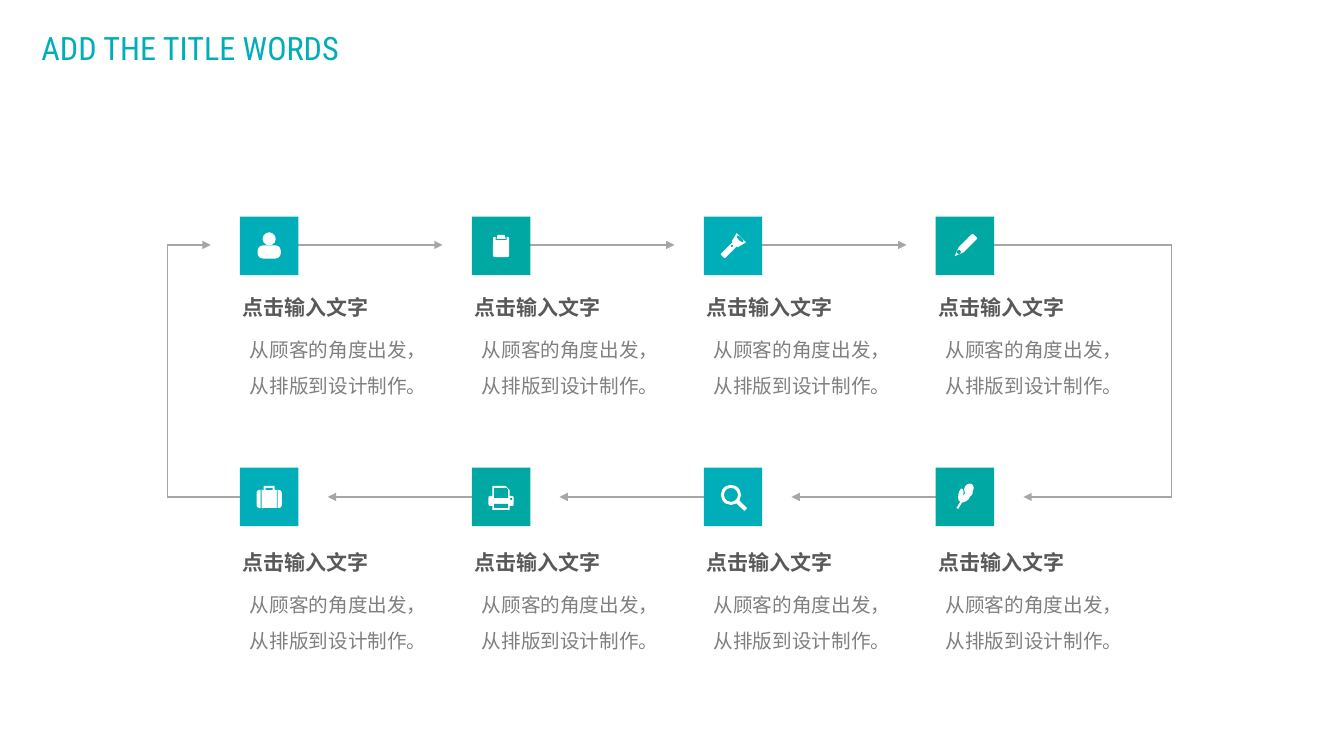
"""Build a slide with eight icon steps joined in a loop of arrows."""
from typing import NamedTuple

from lxml import etree
from pptx import Presentation
from pptx import util as u
from pptx.dml.color import RGBColor
from pptx.enum import shapes, text
from pptx.oxml import ns

PX = 9144
BLUE = RGBColor(0x00, 0xAE, 0xB9)
GREEN = RGBColor(0x00, 0xA8, 0xA4)
WHITE = RGBColor(0xFF, 0xFF, 0xFF)
LINE_GREY = RGBColor(0xA6, 0xA6, 0xA6)
HEADING_GREY = RGBColor(0x59, 0x59, 0x59)
BODY_GREY = RGBColor(0x80, 0x80, 0x80)
CJK = "Noto Sans CJK SC"
HEADING = "点击输入文字"
BODY = "从顾客的角度出发，从排版到设计制作。"

TILE = 58
GAP = TILE // 2
COLUMN_PITCH = 230
COLUMNS = [238 + COLUMN_PITCH * i for i in range(4)]
LOOP_LEFT, LOOP_RIGHT = 166, 1162
TOP_AXIS, BOTTOM_AXIS = 243, 493

SHAPE = shapes.MSO_SHAPE
RISING, FALLING, FLIPPED = 315, 45, 225


class Part(NamedTuple):
    """A piece of an icon, placed by its centre from the tile's centre."""
    kind: SHAPE
    dx: int
    dy: int
    width: int
    height: int
    turn: int = 0
    adjust: float = None
    cut: bool = False


def cut(kind, dx, dy, width, height, turn=0):
    """Return a part in the tile's colour, which reads as a hole."""
    return Part(kind, dx, dy, width, height, turn, cut=True)


def person():
    """Head over rounded shoulders."""
    return [Part(SHAPE.OVAL, 0, -7, 13, 13),
            Part(SHAPE.ROUNDED_RECTANGLE, 0, 6, 23, 13, adjust=0.4)]


def clipboard():
    """Board with a clip on its top edge."""
    return [Part(SHAPE.ROUNDED_RECTANGLE, 0, 1, 16, 20, adjust=0.1),
            cut(SHAPE.RECTANGLE, 0, -8, 11, 4),
            Part(SHAPE.TRAPEZOID, 0, -9, 9, 4)]


def flashlight():
    """Handle and flared head, with lens and button."""
    return [Part(SHAPE.ROUNDED_RECTANGLE, -4, 4, 18, 6, RISING),
            Part(SHAPE.TRAPEZOID, 5, -5, 13, 9, FLIPPED),
            cut(SHAPE.OVAL, 7, -7, 9, 3, FALLING),
            cut(SHAPE.OVAL, -1, 0, 2, 2)]


def pencil():
    """Shaft with a pointed tip."""
    return [Part(SHAPE.ROUNDED_RECTANGLE, 3, -3, 20, 7, RISING),
            Part(SHAPE.ISOSCELES_TRIANGLE, -7, 7, 7, 9, FLIPPED),
            cut(SHAPE.OVAL, -6, 6, 4, 4)]


def briefcase():
    """Case with a handle and two seams."""
    seams = [cut(SHAPE.RECTANGLE, side * 8, 2, 1, 18) for side in (-1, 1)]
    return [Part(SHAPE.ROUNDED_RECTANGLE, 0, 2, 25, 18),
            Part(SHAPE.ROUNDED_RECTANGLE, 0, -8, 11, 6),
            cut(SHAPE.RECTANGLE, 0, -8, 7, 2), *seams]


def printer():
    """Body with a sheet above, a tray below and a button."""
    return [Part(SHAPE.ROUNDED_RECTANGLE, 0, 4, 25, 10),
            Part(SHAPE.SNIP_1_RECTANGLE, 0, -4, 17, 14, adjust=0.3),
            Part(SHAPE.RECTANGLE, 0, 9, 17, 8),
            cut(SHAPE.SNIP_1_RECTANGLE, 0, -4, 14, 10),
            cut(SHAPE.RECTANGLE, 0, 9, 14, 4),
            cut(SHAPE.OVAL, 10, 2, 2, 2)]


def magnifier():
    """Ring with a slanted handle."""
    return [Part(SHAPE.DONUT, -2, -2, 20, 20, adjust=0.15),
            Part(SHAPE.ROUNDED_RECTANGLE, 8, 8, 13, 4, FALLING)]


def feather():
    """Quill with a rounded top, a left vane and two right barbs."""
    barbs = [Part(SHAPE.OVAL, 3 - 3 * i, -2 + 4 * i, 11, 5, 330)
             for i in range(2)]
    return [Part(SHAPE.RECTANGLE, -2, 2, 2, 22, 30),
            Part(SHAPE.OVAL, 4, -8, 9, 11, 30),
            Part(SHAPE.OVAL, -4, -2, 5, 13, 10), *barbs]


class Row(NamedTuple):
    """The tops of a row's elements and its icons."""
    tile_top: int
    heading_top: int
    body_top: int
    icons: list


ROWS = [
    Row(215, 287, 319, [person, clipboard, flashlight, pencil]),
    Row(464, 540, 572, [briefcase, printer, magnifier, feather]),
]


def px(*lengths):
    """Turn px lengths into EMU."""
    return [round(n * PX) for n in lengths]


def add_filled(group, kind, left, top, width, height, color):
    """Add a shape with a plain fill to a group."""
    sp = group.shapes.add_shape(kind, *px(left, top, width, height))
    sp.shadow.inherit = False
    sp.fill.solid()
    sp.fill.fore_color.rgb = color
    sp.line.fill.background()
    return sp


def add_icon_tile(s, left, top, color, icon):
    """Group a coloured square with the parts of its icon."""
    group = s.shapes.add_group_shape()
    add_filled(group, SHAPE.RECTANGLE, left, top, TILE, TILE, color)
    for part in icon():
        sp = add_filled(group, part.kind,
                        left + TILE / 2 + part.dx - part.width / 2,
                        top + TILE / 2 + part.dy - part.height / 2,
                        part.width, part.height, color if part.cut else WHITE)
        sp.rotation = part.turn
        if part.adjust is not None:
            sp.adjustments[0] = part.adjust


def add_line(s, x1, y1, x2, y2, arrow=False):
    """Draw a grey line, with an arrowhead at its end if asked."""
    line = s.shapes.add_connector(shapes.MSO_CONNECTOR.STRAIGHT,
                                  *px(x1, y1, x2, y2))
    line.line.color.rgb = LINE_GREY
    line.line.width = u.Pt(1)
    if arrow:
        ln = line.line._get_or_add_ln()
        etree.SubElement(ln, ns.qn("a:tailEnd"), type="triangle")
    etree.SubElement(line._element.spPr, ns.qn("a:effectLst"))


def write(sp, words, size, font, color, spacing, margins, bold=False):
    """Fill a text shape with one formatted paragraph."""
    tf = sp.text_frame
    tf.text = words
    tf.word_wrap = True
    tf.auto_size = text.MSO_AUTO_SIZE.SHAPE_TO_FIT_TEXT
    tf.vertical_anchor = text.MSO_ANCHOR.TOP
    tf.margin_left = tf.margin_right = margins[0] * PX
    tf.margin_top = tf.margin_bottom = margins[1] * PX
    p = tf.paragraphs[0]
    p.alignment = text.PP_ALIGN.LEFT
    p.line_spacing = spacing
    r = p.runs[0]
    r.font.size = u.Pt(size)
    r.font.name = font
    r.font.bold = bold
    r.font.color.rgb = color
    etree.SubElement(r.font._element, ns.qn("a:ea"), typeface=CJK)


def add_title(s):
    """Place and format the slide title."""
    sp = s.shapes.title
    sp.left, sp.top, sp.width, sp.height = px(32, 4, 336, 68)
    write(sp, "ADD THE TITLE WORDS", 23, "Roboto Condensed", BLUE, 1.5, (9, 5))


def add_step(s, left, row, color, icon):
    """Add one step: tile, heading and body."""
    add_icon_tile(s, left, row.tile_top, color, icon)
    body = s.shapes.add_textbox(*px(left, row.body_top, 191, 77))
    write(body, BODY, 14, CJK, BODY_GREY, 1.5, (10, 5))
    heading = s.shapes.add_textbox(*px(left + 3, row.heading_top, 200, 28))
    write(heading, HEADING, 15, "Arial", HEADING_GREY, 1.2, (0, 0), bold=True)


def add_loop(s):
    """Draw arrows rightwards above, leftwards below, and the two sides."""
    top_starts = [LOOP_LEFT] + [left + TILE for left in COLUMNS[:-1]]
    bottom_starts = COLUMNS[1:] + [LOOP_RIGHT]
    for left, top_start, bottom_start in zip(COLUMNS, top_starts, bottom_starts):
        add_line(s, top_start, TOP_AXIS, left - GAP, TOP_AXIS, arrow=True)
        add_line(s, bottom_start, BOTTOM_AXIS, left + TILE + GAP, BOTTOM_AXIS,
                 arrow=True)
    add_line(s, COLUMNS[-1] + TILE, TOP_AXIS, LOOP_RIGHT, TOP_AXIS)
    add_line(s, COLUMNS[0], BOTTOM_AXIS, LOOP_LEFT, BOTTOM_AXIS)
    for side in (LOOP_LEFT, LOOP_RIGHT):
        add_line(s, side, TOP_AXIS, side, BOTTOM_AXIS)


def main():
    """Build and save the slide."""
    prs = Presentation()
    prs.slide_width, prs.slide_height = px(1333, 750)
    s = prs.slides.add_slide(prs.slide_layouts[5])
    add_title(s)
    add_loop(s)
    for row in ROWS:
        for i, (left, icon) in enumerate(zip(COLUMNS, row.icons)):
            add_step(s, left, row, (BLUE, GREEN)[i % 2], icon)
    prs.save("out.pptx")


if __name__ == "__main__":
    main()
